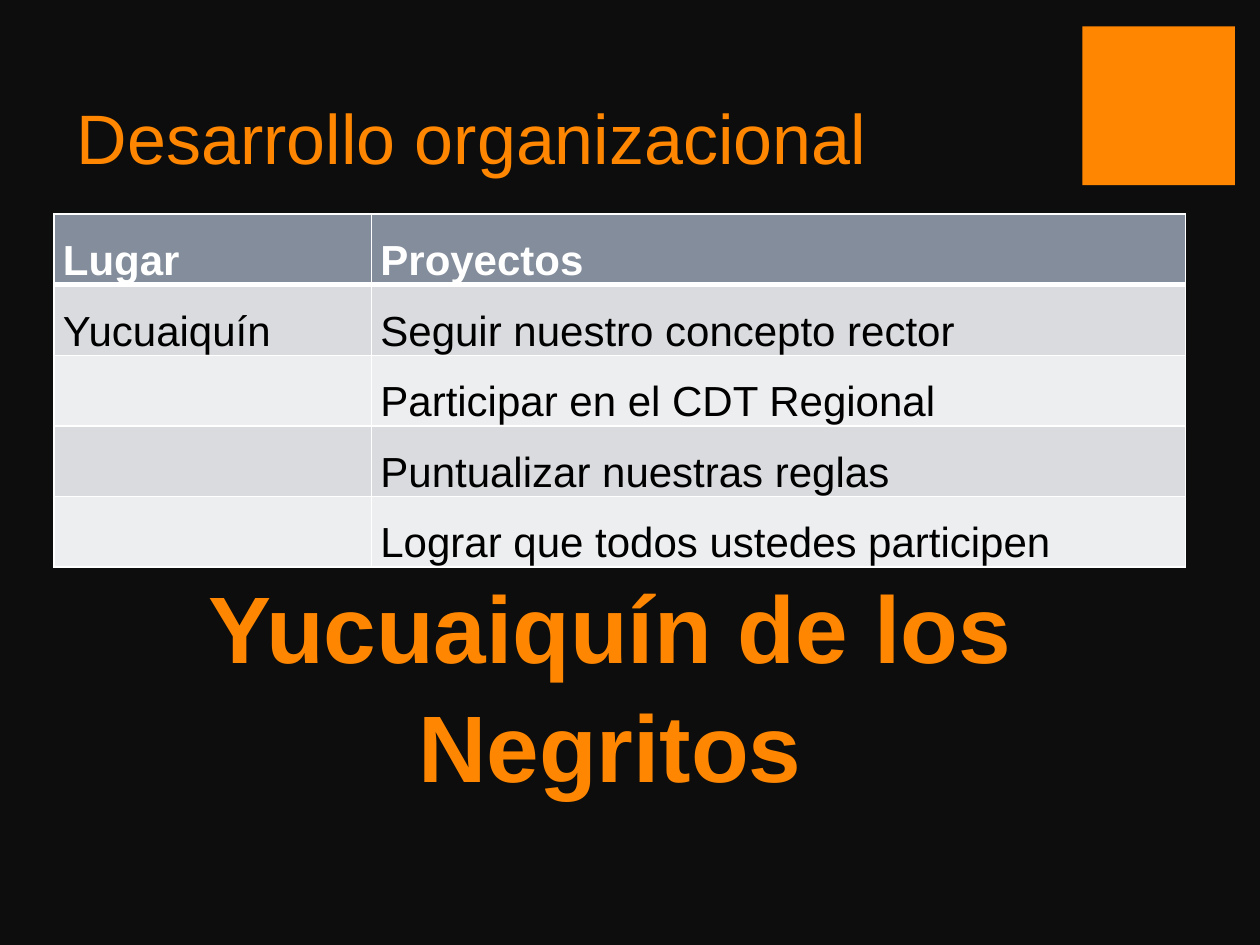
import pptx
import pptx.util
import pptx.dml.color
import pptx.enum.shapes
import pptx.enum.text
from lxml import etree
from pptx.oxml.ns import qn

Inches, Pt = pptx.util.Inches, pptx.util.Pt
ANCHOR = pptx.enum.text.MSO_ANCHOR
ALIGN = pptx.enum.text.PP_ALIGN

COLORS = {
    "background": "0D0D0D",
    "accent": "FF8600",
    "header": "838D9B",
    "band_dark": "D9DBDE",
    "band_light": "EDEEEF",
    "white": "FFFFFF",
    "black": "000000",
}
ROWS = [
    ("Lugar", "Proyectos"),
    ("Yucuaiquín", "Seguir nuestro concepto rector"),
    ("", "Participar en el CDT Regional"),
    ("", "Puntualizar nuestras reglas"),
    ("", "Lograr que todos ustedes participen"),
]


def rgb(name):
    return pptx.dml.color.RGBColor.from_string(COLORS[name])


def set_attrs(obj, values):
    for name, value in values.items():
        setattr(obj, name, value)


def paint(obj, color):
    obj.fill.solid()
    obj.fill.fore_color.rgb = rgb(color)


def write(p, text, size, color, bold=False):
    r = p.add_run()
    r.text = text
    set_attrs(r.font, {"name": "Arial", "size": Pt(size), "bold": bold})
    r.font.color.rgb = rgb(color)


def set_borders(cell, widths):
    tc_pr = cell._tc.get_or_add_tcPr()
    for i, (side, width) in enumerate(widths.items()):
        ln = etree.Element(qn("a:" + side), w=str(Pt(width)))
        fill = etree.SubElement(ln, qn("a:solidFill"))
        etree.SubElement(fill, qn("a:srgbClr"), val=COLORS["white"])
        tc_pr.insert(i, ln)


def add_title(s, x, y, w, h):
    sp = s.shapes.title
    set_attrs(sp, {"left": x, "top": y, "width": w, "height": h})
    tf = sp.text_frame
    set_attrs(tf, {"word_wrap": True, "vertical_anchor": ANCHOR.BOTTOM})
    p = tf.paragraphs[0]
    p.alignment = ALIGN.LEFT
    write(p, "Desarrollo organizacional", 40, "accent")


def add_corner_square(s, x, y, w, h):
    sp = s.shapes.add_shape(pptx.enum.shapes.MSO_SHAPE.RECTANGLE, x, y, w, h)
    sp.shadow.inherit = False
    paint(sp, "accent")
    sp.line.fill.background()


def add_projects_table(s, x, y, w, h):
    table = s.shapes.add_table(len(ROWS), 2, x, y, w, h).table
    place_width = Inches(2.52)
    table.columns[0].width = place_width
    table.columns[1].width = w - place_width
    for i, row in enumerate(ROWS):
        header = i == 0
        band = "header" if header else ("band_light", "band_dark")[i % 2]
        for j, text in enumerate(row):
            cell = table.cell(i, j)
            set_attrs(cell, {"margin_left": Inches(0.07), "margin_right": Inches(0.07),
                             "margin_top": 0, "margin_bottom": 0})
            paint(cell, band)
            set_borders(cell, {"lnL": 1, "lnR": 1, "lnT": 3 if i == 1 else 1,
                               "lnB": 3 if header else 1})
            if text:
                p = cell.text_frame.paragraphs[0]
                set_attrs(p, {"line_spacing": 1.5, "space_after": Pt(6)})
                write(p, text, 24, "white" if header else "black", header)


def add_motto(s, x, y, w, h):
    tf = s.shapes.add_textbox(x, y, w, h).text_frame
    set_attrs(tf, {"word_wrap": True, "vertical_anchor": ANCHOR.BOTTOM,
                   "margin_left": Inches(0.6), "margin_bottom": Inches(0.93)})
    p = tf.paragraphs[0]
    set_attrs(p, {"alignment": ALIGN.CENTER, "line_spacing": 1.05})
    write(p, "Yucuaiquín de los Negritos", 54, "accent", True)


def main():
    prs = pptx.Presentation()
    prs.slide_width, prs.slide_height = Inches(10), Inches(7.5)
    s = prs.slides.add_slide(prs.slide_layouts[5])
    paint(s.background, "background")

    # Heading band
    add_corner_square(s, Inches(8.59), Inches(0.21), Inches(1.21), Inches(1.26))
    add_title(s, Inches(0.51), Inches(0.21), Inches(8.11), Inches(1.26))

    # Projects by place
    add_projects_table(s, Inches(0.43), Inches(1.7), Inches(8.98), Inches(2.8))

    # Closing motto
    add_motto(s, Inches(0.59), Inches(4.6), Inches(8), Inches(2.69))

    prs.save("out.pptx")


if __name__ == "__main__":
    main()
